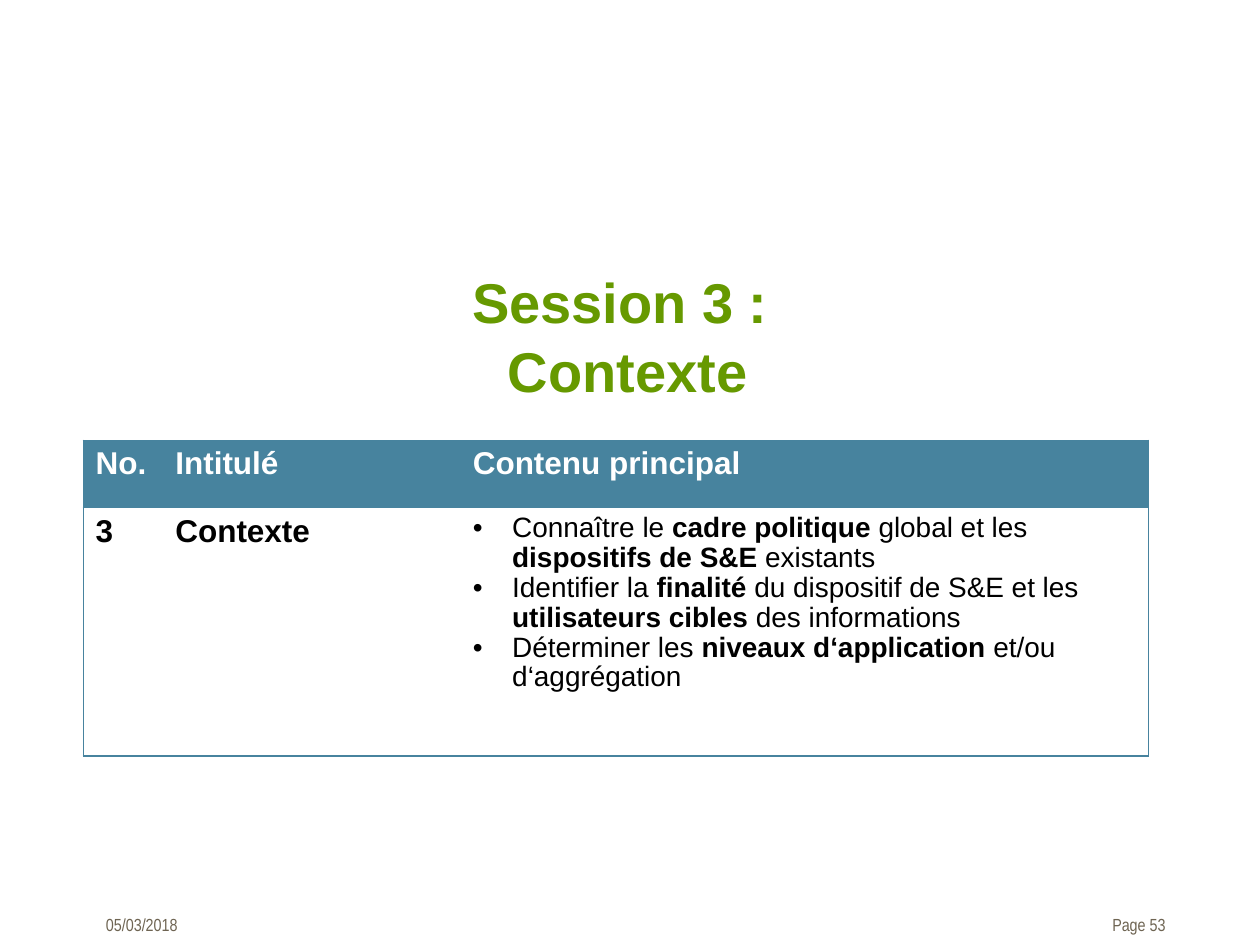
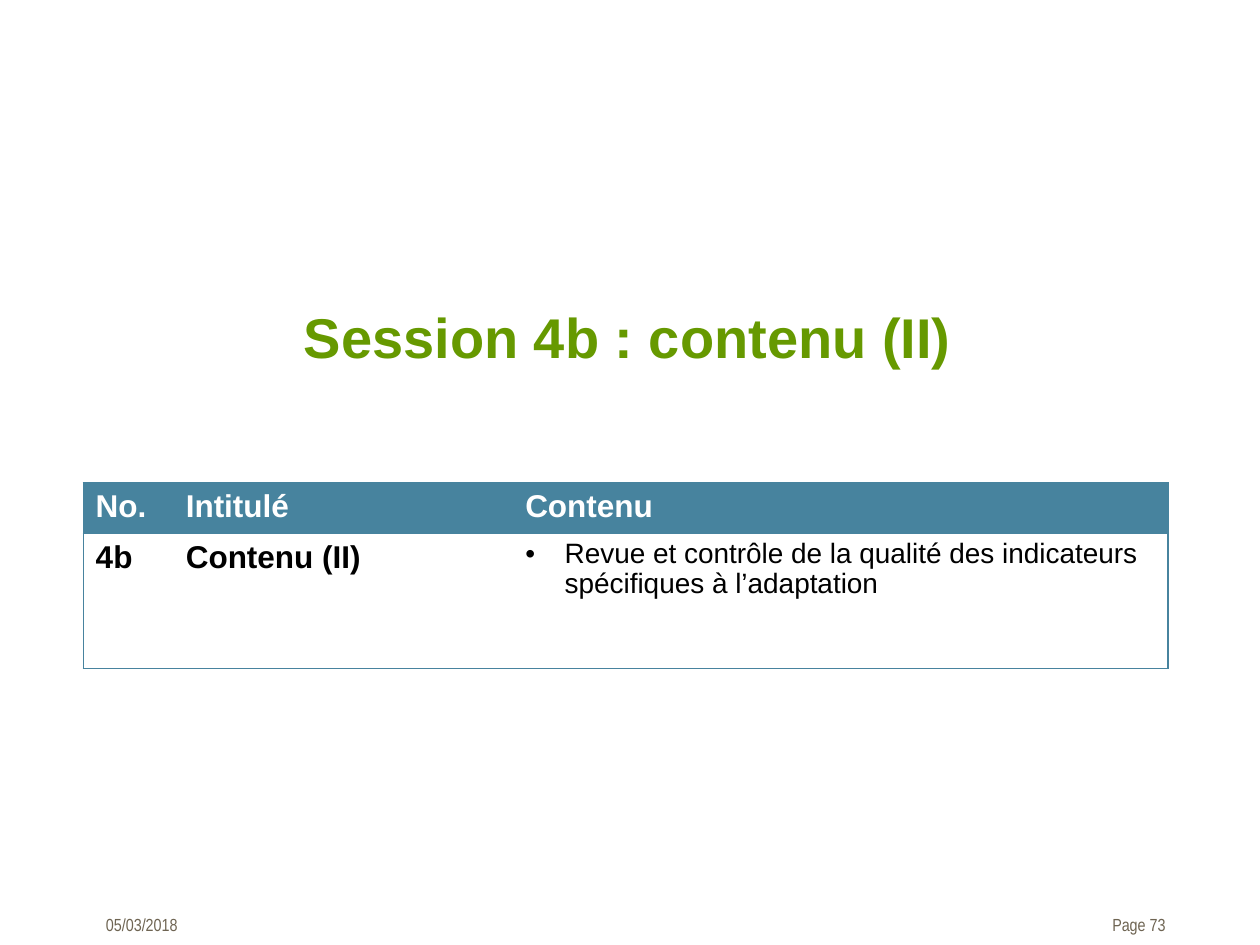
from lxml import etree
from pptx import Presentation
from pptx import util as u
from pptx.dml.color import RGBColor
from pptx.enum import text
from pptx.oxml import ns

GREEN, BLUE, TAUPE = "669900", "47839E", "6E6452"
WHITE, BLACK = "FFFFFF", "000000"
ALIGN = text.PP_ALIGN
INDENT = u.Pt(22.5)

SESSIONS = [
    dict(title="Session 3 : \nContexte", page_number=53,
         table_box=(47.5, 251.5), columns=(45.5, 170, 393.5), rows=(38.5, 142),
         headings=("No.", "Intitulé", "Contenu principal"),
         labels=("3", "Contexte"),
         contents=("Connaître le *cadre politique* global et les *dispositifs de S&E* existants",
                   "Identifier la *finalité* du dispositif de S&E et les "
                   "*utilisateurs cibles* des informations",
                   "Déterminer les *niveaux d‘application* et/ou d‘aggrégation")),
    dict(title="Session 4b : contenu (II)", page_number=73,
         table_box=(47.5, 276), columns=(51.5, 194, 374.5), rows=(28.5, 77),
         headings=("No.", "Intitulé", "Contenu"),
         labels=("4b", "Contenu (II)"),
         contents=("Revue et contrôle de la qualité des indicateurs spécifiques à l’adaptation",)),
]


def rgb(value):
    return RGBColor.from_string(value)


def style(span, size, color, bold=False, name="Arial"):
    span.font.size = u.Pt(size)
    span.font.name = name
    span.font.bold = bold
    span.font.color.rgb = rgb(color)


def add_title(page, box, title):
    holder = page.shapes.title
    holder.left, holder.top, holder.width, holder.height = map(u.Pt, box)
    frame = holder.text_frame
    frame.text = title
    frame.word_wrap = True
    frame.auto_size = text.MSO_AUTO_SIZE.NONE
    frame.vertical_anchor = text.MSO_ANCHOR.MIDDLE
    frame.margin_left = frame.margin_right = frame.margin_top = frame.margin_bottom = 0
    for para in frame.paragraphs:
        para.alignment = ALIGN.CENTER
        para.line_spacing = 1.04
        for span in para.runs:
            style(span, 32, GREEN, bold=True)


def add_footer(page, box, words, align, right_margin):
    frame = page.shapes.add_textbox(*map(u.Pt, box)).text_frame
    frame.word_wrap = True
    frame.margin_right = u.Pt(right_margin)
    frame.text = words
    para = frame.paragraphs[0]
    para.alignment = align
    style(para.runs[0], 10, TAUPE, name="Arial Narrow")


def set_borders(cell, colored_sides):
    properties = cell._tc.get_or_add_tcPr()
    for side in "LRTB":
        line = etree.SubElement(properties, ns.qn(f"a:ln{side}"), w=str(u.Pt(0.75)))
        if side in colored_sides:
            fill = etree.SubElement(line, ns.qn("a:solidFill"))
            etree.SubElement(fill, ns.qn("a:srgbClr"), val=BLUE)
        else:
            etree.SubElement(line, ns.qn("a:noFill"))


def fill_label(cell, words, color):
    cell.text = words
    style(cell.text_frame.paragraphs[0].runs[0], 18, color, bold=True)


def fill_bullets(cell, contents):
    frame = cell.text_frame
    frame.text = "\n".join(contents)
    for para, content in zip(frame.paragraphs, contents):
        para.clear()
        para.line_spacing = 0.96
        properties = para._p.get_or_add_pPr()
        properties.set("marL", str(INDENT))
        properties.set("indent", str(-INDENT))
        etree.SubElement(properties, ns.qn("a:buFont"), typeface="Arial")
        etree.SubElement(properties, ns.qn("a:buChar"), char="•")
        for index, words in enumerate(content.split("*")):
            span = para.add_run()
            span.text = words
            style(span, 16, BLACK, bold=index % 2 == 1)


def add_session_table(page, corner, columns, rows, headings, labels, contents):
    box = (*corner, sum(columns), sum(rows))
    table = page.shapes.add_table(len(rows), len(columns), *map(u.Pt, box)).table
    table.horz_banding = False
    for column, width in zip(table.columns, columns):
        column.width = u.Pt(width)
    for row, height in zip(table.rows, rows):
        row.height = u.Pt(height)
    for row, fill in enumerate((BLUE, WHITE)):
        for column, outer_side in enumerate(("L", "", "R")):
            cell = table.cell(row, column)
            set_borders(cell, "TB" + outer_side)
            cell.fill.solid()
            cell.fill.fore_color.rgb = rgb(fill)
    for column, heading in enumerate(headings):
        fill_label(table.cell(0, column), heading, WHITE)
    for column, label in enumerate(labels):
        fill_label(table.cell(1, column), label, BLACK)
    fill_bullets(table.cell(1, 2), contents)


def add_session(deck, title, page_number, table_box, **table_parts):
    page = deck.slides.add_slide(deck.slide_layouts[5])
    add_footer(page, (593.5, 518.5, 72.5, 19.5), f"Page {page_number}", ALIGN.RIGHT, 0)
    add_footer(page, (53.5, 518.5, 102, 19.5), "05/03/2018", ALIGN.LEFT, 7.2)
    add_title(page, (82, 146, 553.5, 90), title)
    add_session_table(page, table_box, **table_parts)


def main():
    deck = Presentation()
    deck.slide_width, deck.slide_height = u.Pt(720), u.Pt(540)
    for session in SESSIONS:
        add_session(deck, **session)
    deck.save("out.pptx")


if __name__ == "__main__":
    main()
